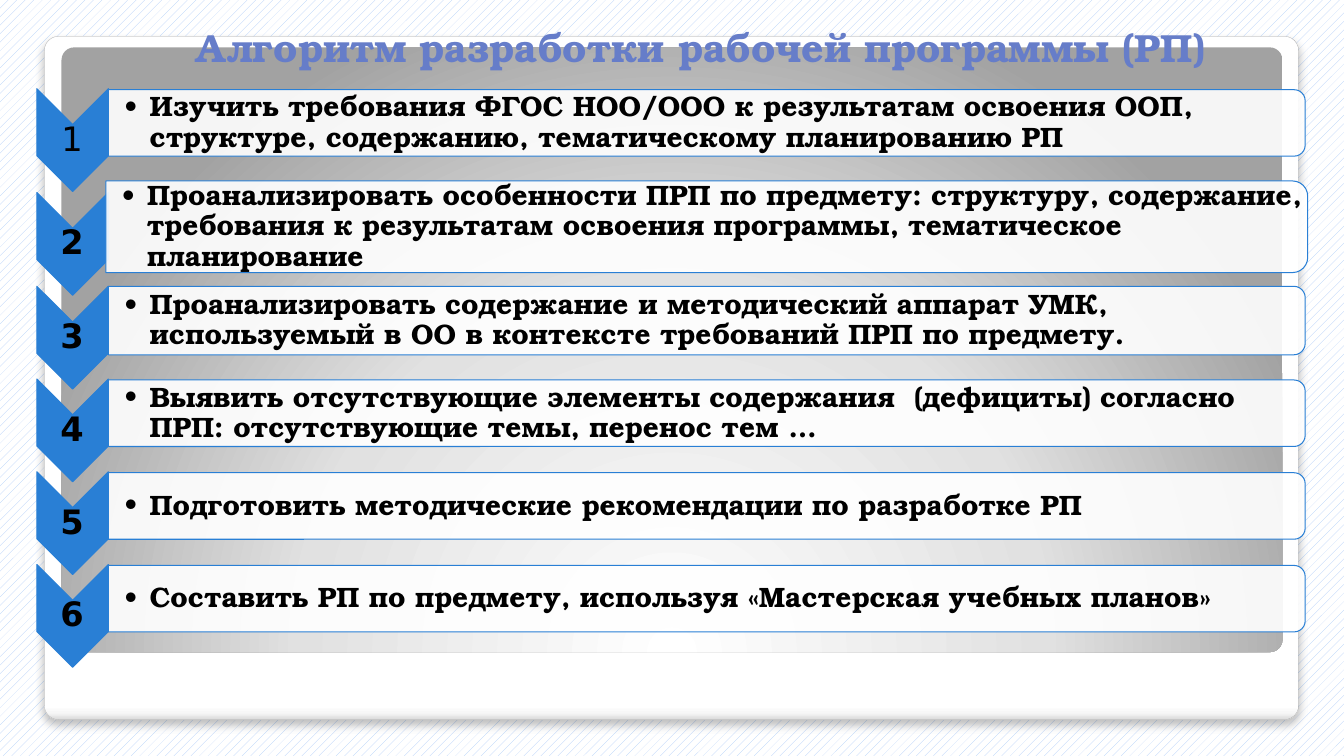
from lxml.etree import SubElement
from pptx import Presentation
from pptx.dml.color import RGBColor
from pptx.enum.dml import MSO_PATTERN
from pptx.enum.shapes import MSO_SHAPE
from pptx.enum.text import MSO_ANCHOR, PP_ALIGN
from pptx.oxml import parse_xml
from pptx.oxml.ns import nsdecls, qn
from pptx.util import Inches, Pt

COLORS = {
    "title": "667DC9", "blue": "297FD5", "white": "FFFFFF", "black": "000000",
    "pattern": "ACCBF9", "panel_line": "A4A4A4",
}
SERIF = "TeX Gyre Bonum"
SANS = "DejaVu Sans"
TITLE = "Алгоритм разработки рабочей программы (РП)"
STEPS = [
    "Изучить требования ФГОС НОО/ООО к результатам освоения ООП, "
    "структуре, содержанию, тематическому планированию РП",
    "Проанализировать особенности ПРП по предмету: структуру, содержание, "
    "требования к результатам освоения программы, тематическое планирование",
    "Проанализировать содержание и методический аппарат УМК, используемый "
    "в ОО в контексте требований ПРП по предмету.",
    "Выявить отсутствующие элементы содержания  (дефициты) согласно ПРП: "
    "отсутствующие темы, перенос тем …",
    "Подготовить методические рекомендации по разработке РП",
    "Составить РП по предмету, используя «Мастерская учебных планов»",
]
BAR_HEIGHTS = [0.66, 0.91, 0.68, 0.66, 0.66, 0.66]
FIRST_CENTERS = [1.22, 2.25]
REGULAR_CENTER, ROW_PITCH = 3.18, 0.92
BAR_MIDDLE = 7.01
CHEVRON_MIDDLE, CHEVRON_DROP = 0.72, 0.17


def rgb(name):
    return RGBColor.from_string(COLORS[name])


def style_run(span, size, font, color, bold):
    span.font.size = Pt(size)
    span.font.name = font
    span.font.bold = bold
    span.font.color.rgb = rgb(color)


def set_gradient(shape, stops, direction):
    """Fill with (percent, hex) stops; direction is the a:lin or a:path XML."""
    stop_xml = "".join(
        f'<a:gs pos="{percent * 1000}"><a:srgbClr val="{color}"/></a:gs>'
        for percent, color in stops)
    gradient = parse_xml(
        f'<a:gradFill {nsdecls("a")} rotWithShape="1">'
        f'<a:gsLst>{stop_xml}</a:gsLst>{direction}</a:gradFill>')
    shape.fill.background()
    properties = shape._element.spPr
    properties.replace(properties.find(qn("a:noFill")), gradient)


def add_panel(page, left, top, width, height, stops, direction):
    panel = page.shapes.add_shape(
        MSO_SHAPE.ROUNDED_RECTANGLE,
        Inches(left), Inches(top), Inches(width), Inches(height))
    panel.adjustments[0] = 0.021
    panel.shadow.inherit = False
    panel.line.fill.background()
    set_gradient(panel, stops, direction)
    return panel


def add_drop_shadow(shape):
    effects = shape._element.spPr.find(qn("a:effectLst"))
    shadow = SubElement(effects, qn("a:outerShdw"), blurRad=str(Pt(6)),
                        dist=str(Pt(4)), dir="5400000", rotWithShape="0")
    color = SubElement(shadow, qn("a:srgbClr"), val=COLORS["black"])
    SubElement(color, qn("a:alpha"), val="25000")


def add_turned_shape(page, kind, middle_x, middle_y, width, height, color):
    """Add a shape turned by 90 degrees; width and height are as seen."""
    shape = page.shapes.add_shape(
        kind, Inches(middle_x - height / 2), Inches(middle_y - width / 2),
        Inches(height), Inches(width))
    shape.rotation = 90
    shape.shadow.inherit = False
    shape.fill.solid()
    shape.fill.fore_color.rgb = rgb(color)
    shape.line.color.rgb = rgb("blue")
    shape.line.width = Pt(0.75)
    return shape


def add_text(page, left, middle_y, width, height, text, size, font, bold, insets):
    box = page.shapes.add_textbox(
        Inches(left), Inches(middle_y - height / 2), Inches(width), Inches(height))
    frame = box.text_frame
    frame.word_wrap = True
    frame.vertical_anchor = MSO_ANCHOR.MIDDLE
    frame.margin_left, frame.margin_right = Inches(insets[0]), Inches(insets[1])
    frame.margin_top = frame.margin_bottom = Inches(insets[1])
    frame.text = text
    para = frame.paragraphs[0]
    para.line_spacing = 0.9
    style_run(para.runs[0], size, font, "black", bold)
    return para


def add_bullet(para):
    properties = para._p.get_or_add_pPr()
    properties.set("marL", str(Inches(0.25)))
    properties.set("indent", str(Inches(-0.25)))
    SubElement(properties, qn("a:buFont"), typeface=SERIF)
    SubElement(properties, qn("a:buChar"), char="•")


def add_step(page, number, text, middle_y, bar_height):
    chevron_y = middle_y + CHEVRON_DROP
    add_turned_shape(page, MSO_SHAPE.CHEVRON, CHEVRON_MIDDLE, chevron_y,
                     0.71, 1.02, "blue")
    label = add_text(page, 0.36, chevron_y, 0.71, 0.31, str(number),
                     24, SANS, number > 1, (0.02, 0.02))
    label.alignment = PP_ALIGN.CENTER

    bar_width = 11.92 if number == 2 else 11.87
    bar = add_turned_shape(page, MSO_SHAPE.ROUND_2_SAME_RECTANGLE, BAR_MIDDLE,
                           middle_y, bar_width, bar_height, "white")
    bar_color = bar._element.spPr.find(qn("a:solidFill"))[0]
    SubElement(bar_color, qn("a:alpha"), val="90000")
    para = add_text(page, BAR_MIDDLE - bar_width / 2, middle_y, bar_width - 0.04,
                    bar_height - 0.06, text, 20, SERIF, True, (0.16, 0.01))
    add_bullet(para)


def add_title(page):
    title = page.shapes.title
    title.left, title.top = Inches(0.96), Inches(0.17)
    title.width, title.height = Inches(11.99), Inches(0.58)
    title.text_frame.text = TITLE
    title.text_frame.vertical_anchor = MSO_ANCHOR.BOTTOM
    para = title.text_frame.paragraphs[0]
    para.alignment = PP_ALIGN.CENTER
    style_run(para.runs[0], 28, SERIF, "title", True)
    page.shapes._spTree.append(title._element)  # bring in front of the panels


def add_background(page):
    fill = page.background.fill
    fill.patterned()
    fill.pattern = MSO_PATTERN.PERCENT_20
    fill.fore_color.rgb = rgb("pattern")
    fill.back_color.rgb = rgb("white")

    card = add_panel(
        page, 0.44, 0.36, 12.44, 6.78,
        [(0, "FFFFFF"), (98, "FFFFFF"), (99, "F7F7F7"), (100, "DADADA")],
        '<a:lin ang="5400000" scaled="0"/>')
    card.line.color.rgb = rgb("panel_line")
    card.line.width = Pt(0.16)
    add_drop_shadow(card)
    add_panel(
        page, 0.61, 0.47, 12.11, 6,
        [(0, "FFFFFF"), (55, "E1E1E1"), (100, "A2A2A2")],
        '<a:path path="circle">'
        '<a:fillToRect l="50000" t="175000" r="50000" b="-75000"/></a:path>')


def main():
    deck = Presentation()
    deck.slide_width, deck.slide_height = Inches(13.33), Inches(7.5)
    page = deck.slides.add_slide(deck.slide_layouts[5])
    add_background(page)
    add_title(page)
    regular_rows = len(STEPS) - len(FIRST_CENTERS)
    centers = FIRST_CENTERS + [
        REGULAR_CENTER + ROW_PITCH * row for row in range(regular_rows)]
    rows = zip(STEPS, centers, BAR_HEIGHTS)
    for number, (text, middle_y, bar_height) in enumerate(rows, start=1):
        add_step(page, number, text, middle_y, bar_height)
    deck.save("out.pptx")


if __name__ == "__main__":
    main()
